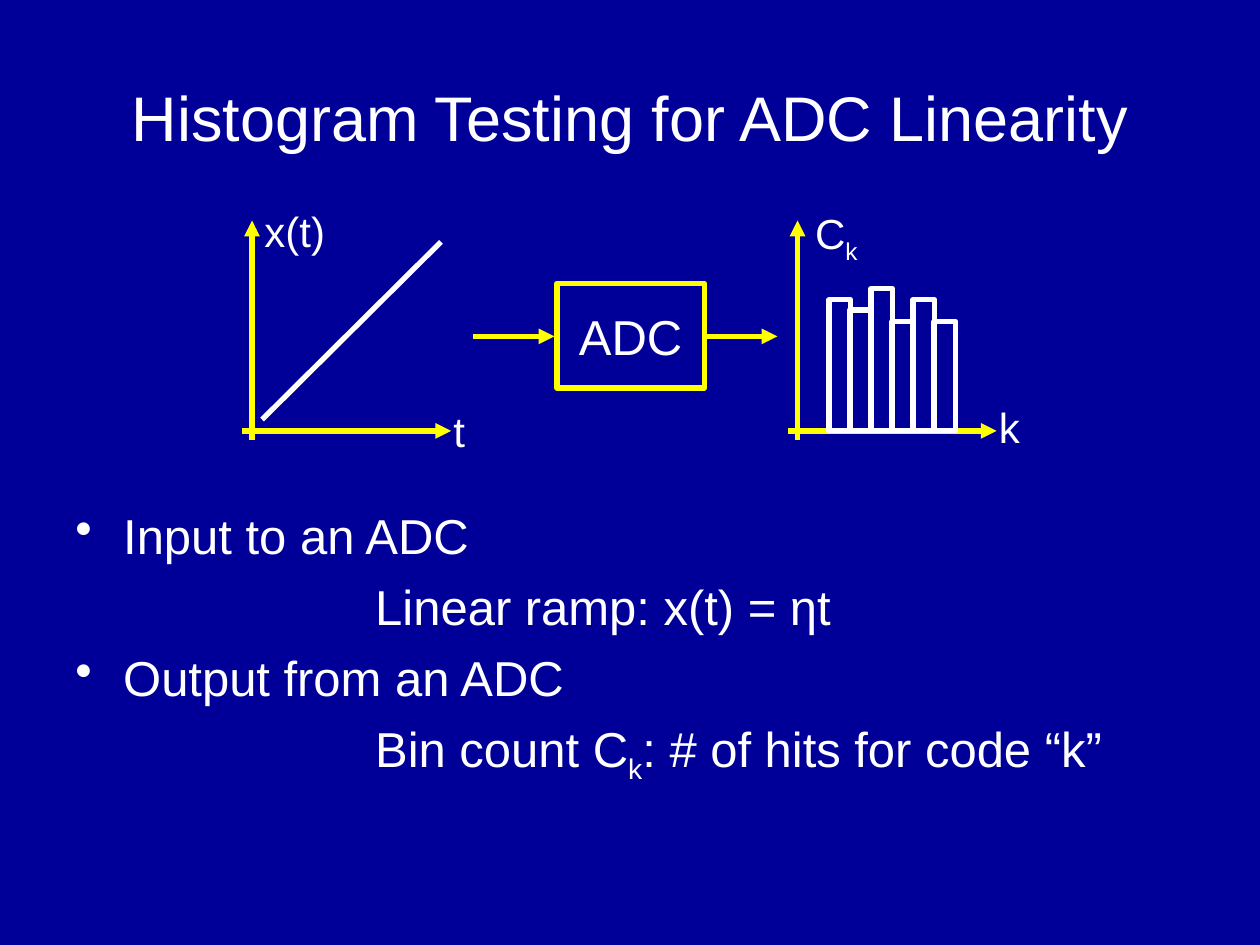
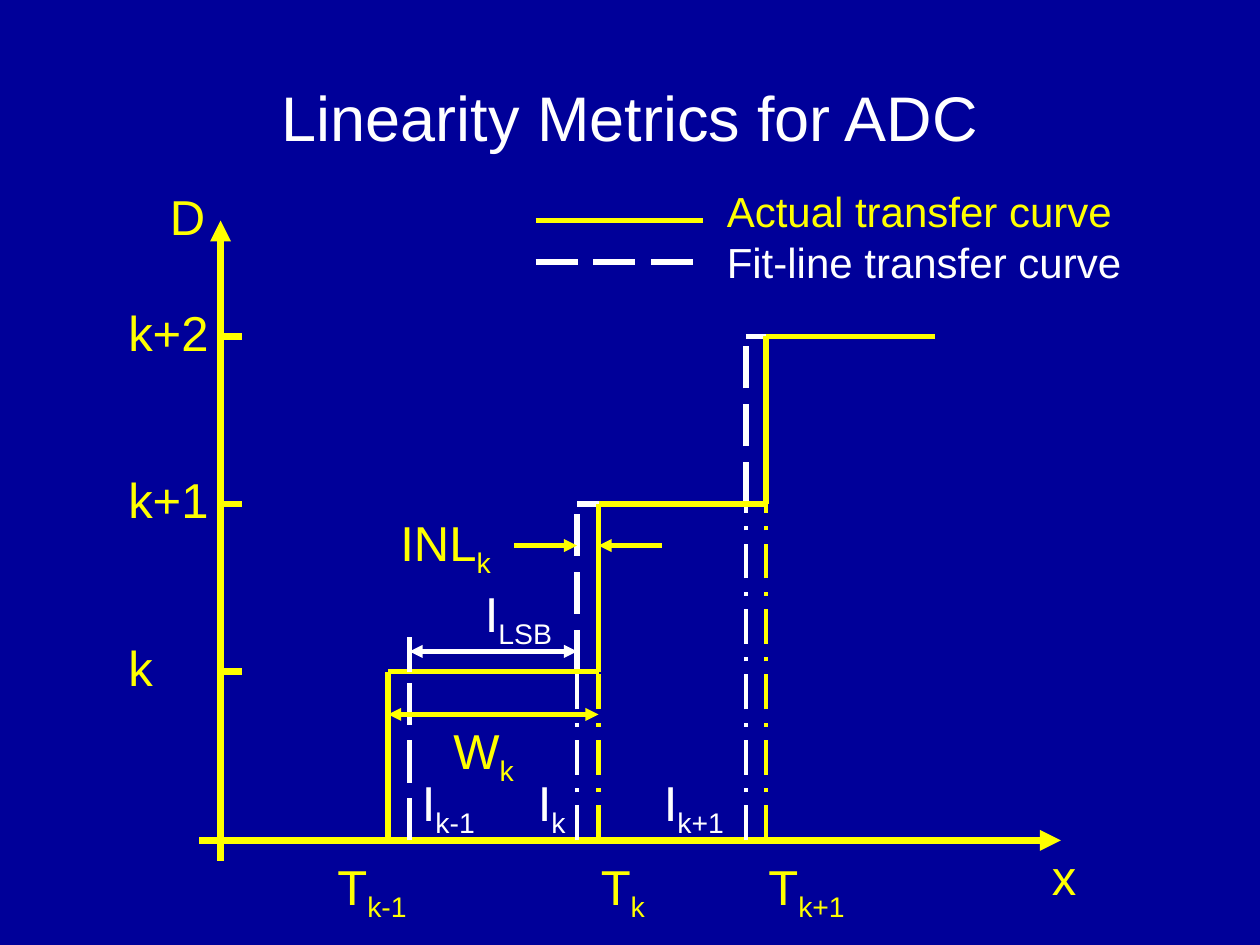
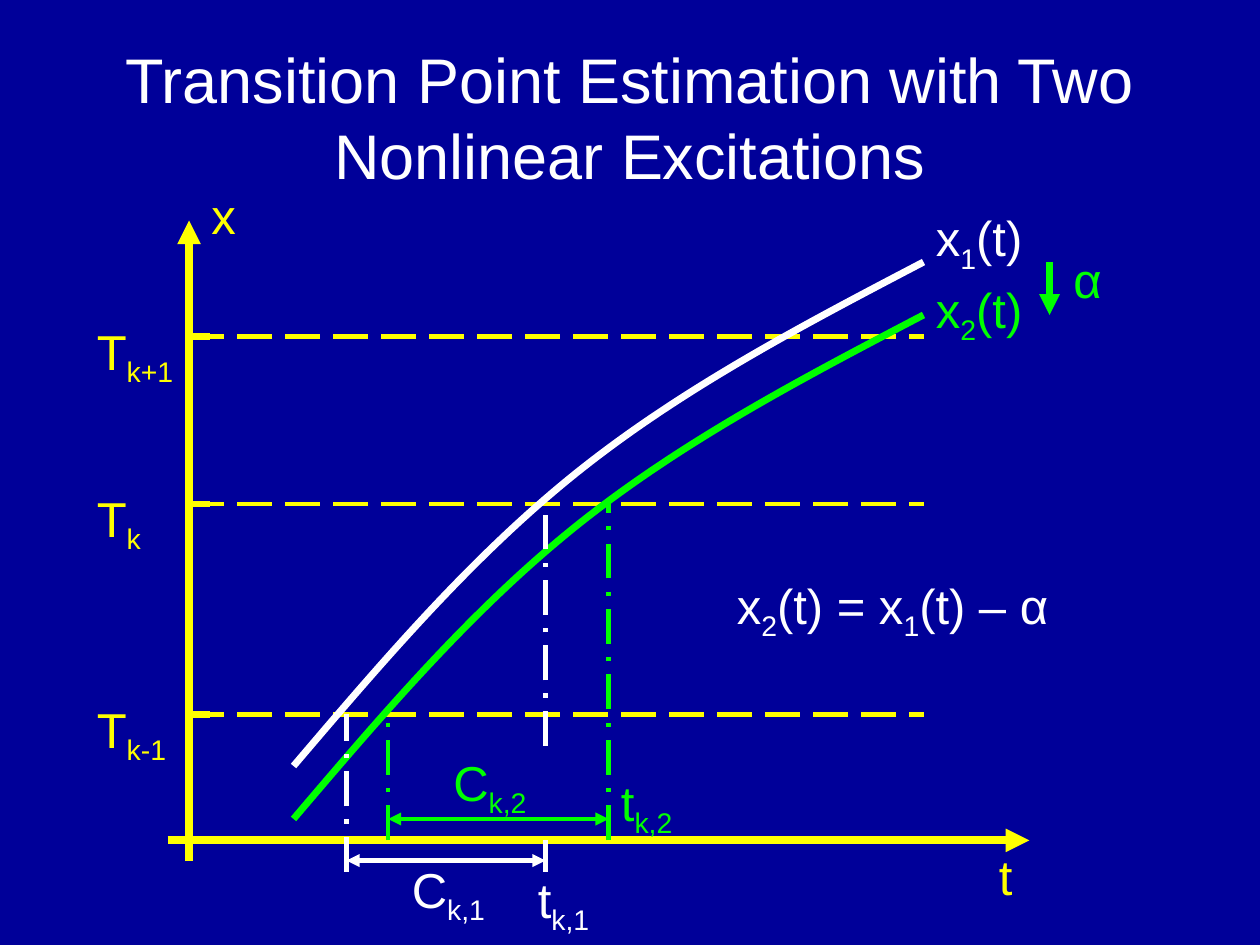
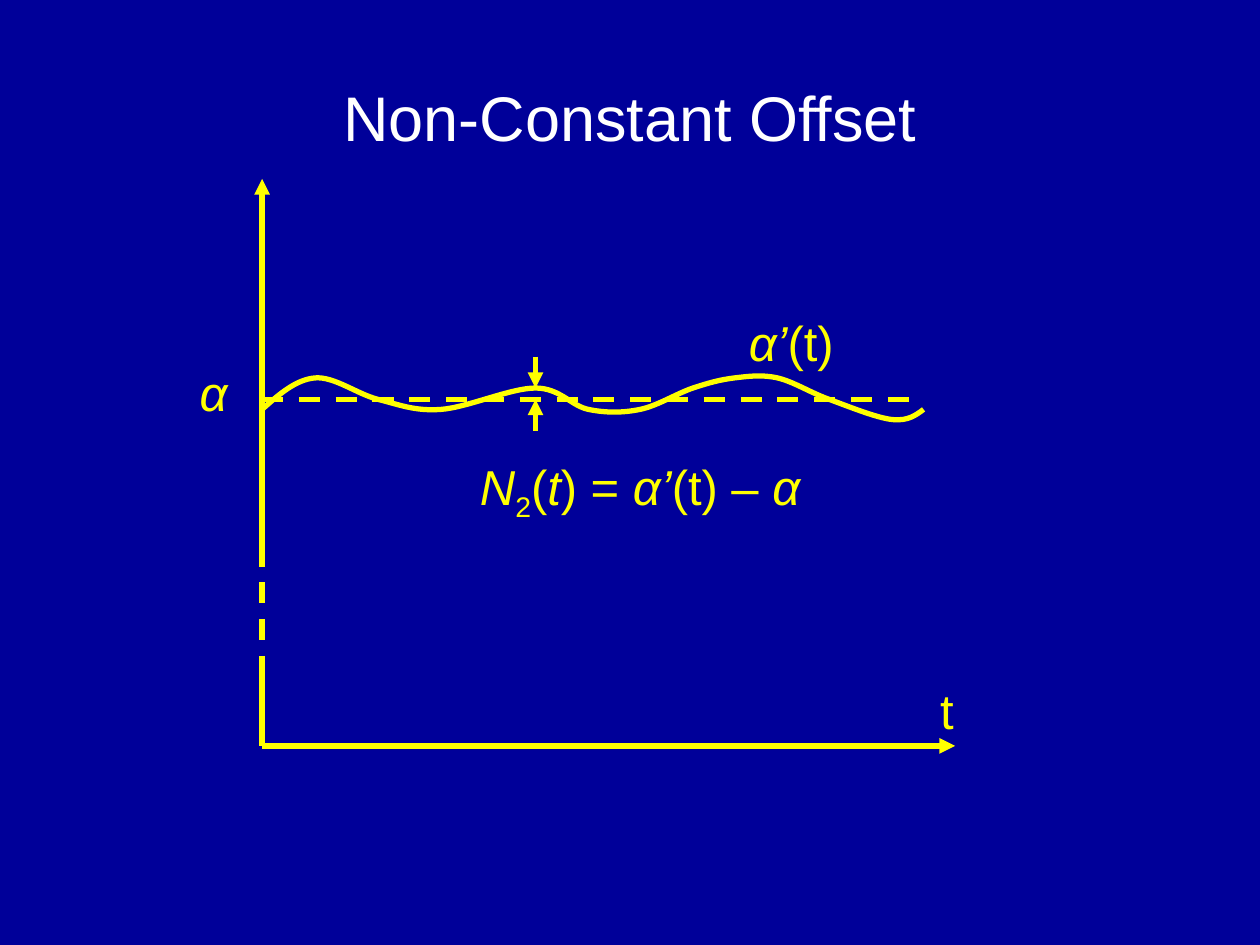
from lxml.etree import SubElement
from pptx import Presentation
from pptx.dml.color import RGBColor
from pptx.enum.dml import MSO_LINE
from pptx.enum.shapes import MSO_CONNECTOR, MSO_SHAPE
from pptx.enum.text import MSO_ANCHOR, PP_ALIGN
from pptx.oxml.ns import qn
from pptx.util import Inches, Pt

NAVY, WHITE, YELLOW, GREEN = "000099", "FFFFFF", "FFFF00", "00FF00"
FONT = "Arial"
LABEL_HEIGHT = {28: 0.57, 24: 0.5}
DASH, LONG_DASH, DASH_DOT = MSO_LINE.DASH, MSO_LINE.LONG_DASH, MSO_LINE.LONG_DASH_DOT


def color(hex_value):
    return RGBColor.from_string(hex_value)


def midpoint(a, b):
    return (a[0] + b[0]) / 2, (a[1] + b[1]) / 2


def control_points(points):
    """Return three Bezier points per segment of a smooth curve through points."""
    last = len(points) - 1
    tangents = [None] * (last + 1)
    for i in range(1, last):
        before, after = points[i - 1], points[i + 1]
        tangents[i] = (after[0] - before[0]) / 6, (after[1] - before[1]) / 6
    result = []
    for i in range(last):
        start, end = points[i], points[i + 1]
        if i > 0:
            leaving = start[0] + tangents[i][0], start[1] + tangents[i][1]
        if i + 1 < last:
            arriving = end[0] - tangents[i + 1][0], end[1] - tangents[i + 1][1]
        else:
            arriving = midpoint(leaving, end)
        if i == 0:
            leaving = midpoint(start, arriving)
        result += [leaving, arriving, end]
    return result


class DiagramDeck:
    def __init__(self):
        self.deck = Presentation()
        self.deck.slide_width, self.deck.slide_height = Inches(10), Inches(7.5)
        self.page = None

    def new_page(self, title, margin=0.5):
        self.page = self.deck.slides.add_slide(self.deck.slide_layouts[6])
        fill = self.page.background.fill
        fill.solid()
        fill.fore_color.rgb = color(NAVY)
        box = self.text_box(margin, 0.3, 10 - 2 * margin, 1.25)
        box.text_frame.vertical_anchor = MSO_ANCHOR.MIDDLE
        self.add_spans(box.text_frame.paragraphs[0], title, WHITE, 36, PP_ALIGN.CENTER)

    def text_box(self, left, top, width, height):
        box = self.page.shapes.add_textbox(*map(Inches, (left, top, width, height)))
        box.text_frame.word_wrap = True
        return box

    def add_spans(self, para, text, hue, size, align=PP_ALIGN.LEFT):
        """Fill a paragraph; |x| marks a subscript and *x* marks italics."""
        para.alignment = align
        for i, piece in enumerate(text.split("|")):
            for j, part in enumerate(piece.split("*")):
                if not part:
                    continue
                span = para.add_run()
                span.text = part
                formats = {"name": FONT, "size": Pt(size), "italic": j % 2 == 1}
                for name, value in formats.items():
                    setattr(span.font, name, value)
                span.font.color.rgb = color(hue)
                if i % 2:
                    span._r.get_or_add_rPr().set("baseline", "-25000")

    def label(self, text, left, top, width=0.83, hue=YELLOW, size=28):
        box = self.text_box(left, top, width, LABEL_HEIGHT[size])
        self.add_spans(box.text_frame.paragraphs[0], text, hue, size)

    def centered_label(self, text, left, top, width, height=0.57, spacing=1.0):
        box = self.text_box(left, top, width, height)
        box.text_frame.word_wrap = False
        para = box.text_frame.paragraphs[0]
        para.line_spacing = spacing
        self.add_spans(para, text, YELLOW, 28, PP_ALIGN.CENTER)

    def outline_list(self, items, left, top, width, height):
        """Add (text, is_bulleted) items; the unbulleted ones sit deeper."""
        frame = self.text_box(left, top, width, height).text_frame
        for i, (text, bulleted) in enumerate(items):
            para = frame.add_paragraph() if i else frame.paragraphs[0]
            para.space_before = Pt(7)
            self.add_spans(para, text, WHITE, 28)
            properties = para._p.get_or_add_pPr()
            properties.set("marL", str(Inches(0.38 if bulleted else 2.38)))
            properties.set("indent", str(Inches(-0.38 if bulleted else 0)))
            if bulleted:
                SubElement(properties, qn("a:buChar"), char="•")

    def stroke(self, shape, hue, weight, dash=None):
        shape.line.color.rgb = color(hue)
        shape.line.width = Pt(weight)
        if dash:
            shape.line.dash_style = dash

    def line(self, start, end, hue=YELLOW, weight=3, dash=None, heads=0):
        """Draw a line; heads is 0, 1 (arrow at the end) or 2 (both ends)."""
        connector = self.page.shapes.add_connector(
            MSO_CONNECTOR.STRAIGHT, *map(Inches, (*start, *end)))
        self.stroke(connector, hue, weight, dash)
        properties = connector._element.spPr
        for tag in ("a:headEnd", "a:tailEnd")[2 - heads:]:
            SubElement(properties.find(qn("a:ln")), qn(tag), type="triangle")
        SubElement(properties, qn("a:effectLst"))

    def steps(self, corners, hue, dash=None):
        for start, end in zip(corners, corners[1:]):
            self.line(start, end, hue, 3, dash)

    def frame(self, left, top, width, height, hue, text=""):
        box = self.page.shapes.add_shape(
            MSO_SHAPE.RECTANGLE, *map(Inches, (left, top, width, height)))
        box.shadow.inherit = False
        box.fill.background()
        self.stroke(box, hue, 3)
        if text:
            box.text_frame.word_wrap = False
            box.text_frame.vertical_anchor = MSO_ANCHOR.MIDDLE
            self.add_spans(box.text_frame.paragraphs[0], text, WHITE, 28, PP_ALIGN.CENTER)

    def curve(self, points, hue, weight):
        builder = self.page.shapes.build_freeform(*map(Inches, points[0]))
        builder.add_line_segments(
            [(Inches(x), Inches(y)) for x, y in control_points(points)], close=False)
        shape = builder.convert_to_shape()
        shape.shadow.inherit = False
        shape.fill.background()
        self.stroke(shape, hue, weight)
        segments = list(shape._element.iter(qn("a:lnTo")))
        outline = segments[0].getparent()
        for i in range(0, len(segments), 3):
            bend = SubElement(outline, qn("a:cubicBezTo"))
            for segment in segments[i:i + 3]:
                bend.append(segment[0])
                outline.remove(segment)


def histogram_page(art):
    art.new_page("Histogram Testing for ADC Linearity")
    art.outline_list([
        ("Input to an ADC", True),
        ("Linear ramp: x(t) = ηt", False),
        ("Output from an ADC", True),
        ("Bin count C|k|: # of hits for code “k”", False),
    ], 0.5, 3.96, 9, 2.74)

    base = 3.42
    for origin in (2, 6.33):
        art.line((origin - 0.08, base), (origin + 1.58, base), heads=1)
        art.line((origin, 3.49), (origin, 1.75), heads=1)
    art.line((2.08, 3.33), (3.5, 1.92), WHITE)
    art.frame(4.42, 2.25, 1.17, 0.83, YELLOW, "ADC")
    for start, end in ((3.75, 4.4), (5.6, 6.17)):
        art.line((start, 2.67), (end, 2.67), heads=1)
    for i, height in enumerate((1.04, 0.96, 1.13, 0.87, 1.04, 0.87)):
        art.frame(6.58 + i / 6, base - height, 0.17, height, WHITE)
    for text, left, top in (("x(t)", 2, 1.58), ("t", 3.5, 3.17),
                            ("C|k|", 6.37, 1.6), ("k", 7.83, 3.14)):
        art.label(text, left, top, 0.92, WHITE, 24)


def metrics_page(art):
    art.new_page("Linearity Metrics for ADC", margin=0)
    floor, level_k, level_k1, level_k2 = 6.67, 5.33, 4, 2.67
    art.line((1.58, floor), (8.42, floor), weight=4, heads=1)
    art.line((1.75, 6.83), (1.75, 1.75), weight=4, heads=1)

    fit = (3.25, 4.58, 5.92, 7.25)
    actual = (3.08, 4.75, 6.08, 7.42)
    for edges, hue, dash in ((fit, WHITE, LONG_DASH), (actual, YELLOW, None)):
        corners = [(edges[0], floor)]
        for i, level in enumerate((level_k, level_k1, level_k2)):
            corners += [(edges[i], level), (edges[i + 1], level)]
        art.steps(corners, hue, dash)
        for x, level in zip(edges[1:], (level_k, level_k1)):
            art.line((x, floor), (x, level), hue, 2.5, DASH_DOT)
    art.line((fit[0], level_k), (fit[0], 5), WHITE, 2.5, DASH_DOT)

    for level, text in ((level_k, "k"), (level_k1, "k+1"), (level_k2, "k+2")):
        art.line((1.75, level), (1.92, level), weight=4)
        art.label(text, 0.92, level - 0.32, 1)
    for index, t_left, i_left in (("k-1", 2.58, 3.25), ("k", 4.67, 4.17), ("k+1", 6, 5.17)):
        art.label(f"T|{index}|", t_left, 6.75, 1)
        art.label(f"I|{index}|", i_left, 6.08, hue=WHITE)
    art.label("D", 1.25, 1.43)
    art.label("x", 8.25, 6.67)

    art.line((4.08, 4.33), (fit[1], 4.33), weight=2.5, heads=1)
    art.line((5.25, 4.33), (actual[1], 4.33), weight=2.5, heads=1)
    art.label("INL|k|", 3.08, 4.02, 1)
    art.line((actual[0], 5.67), (actual[1], 5.67), weight=2.5, heads=2)
    art.label("W|k|", 3.5, 5.67)
    art.line((fit[0], 5.17), (fit[1], 5.17), WHITE, 2.5, heads=2)
    art.label("I|LSB|", 3.75, 4.58, hue=WHITE)

    for text, y, top, hue, dash in (
            ("Actual transfer curve", 1.75, 1.42, YELLOW, None),
            ("Fit-line transfer curve", 2.08, 1.83, WHITE, LONG_DASH)):
        art.line((4.25, y), (5.58, y), hue, 3, dash)
        art.label(text, 5.67, top, 3.5, hue, 24)


def transition_page(art):
    art.new_page("Transition Point Estimation with Two Nonlinear Excitations", margin=0)
    floor = 6.67
    art.line((1.33, floor), (8.17, floor), weight=4.5, heads=1)
    art.line((1.5, 6.83), (1.5, 1.75), weight=4.5, heads=1)
    art.label("x", 1.58, 1.42)
    art.label("t", 7.83, 6.67)
    for index, level in (("k-1", 5.67), ("k", 4), ("k+1", 2.67)):
        art.line((1.5, level), (1.67, level), weight=4)
        art.line((1.5, level), (7.33, level), weight=2.5, dash=LONG_DASH)
        art.label(f"T|{index}|", 0.67, level - 0.17, 1)

    ramp, alpha = ((2.33, 6.08), (4.58, 3.75), (7.33, 2.08)), 0.42
    art.curve(ramp, WHITE, 4)
    art.curve([(x, y + alpha) for x, y in ramp], GREEN, 4)

    for start, end, hue in (
            ((4.33, 5.92), (4.33, 4), WHITE), ((2.75, 6.92), (2.75, 5.67), WHITE),
            ((4.83, floor), (4.83, 4), GREEN), ((3.08, floor), (3.08, 5.67), GREEN)):
        art.line(start, end, hue, 2.5, DASH_DOT)
    art.line((4.33, 6.92), (4.33, floor), WHITE, 2.5)
    art.line((2.75, 6.83), (4.33, 6.83), WHITE, 2.5, heads=2)
    art.line((3.08, 6.5), (4.83, 6.5), GREEN, 2.5, heads=2)
    art.line((8.33, 2.08), (8.33, 2.08 + alpha), GREEN, 4, heads=1)

    for text, left, top, width, hue in (
            ("x|1|(t)", 7.33, 1.6, 1, WHITE), ("x|2|(t)", 7.33, 2.17, 1, GREEN),
            ("C|k,1|", 3.17, 6.77, 1, WHITE), ("C|k,2|", 3.5, 5.92, 1, GREEN),
            ("t|k,1|", 4.17, 6.85, 0.83, WHITE), ("t|k,2|", 4.83, 6.08, 0.83, GREEN),
            ("α", 8.42, 1.93, 0.5, GREEN),
            ("x|2|(t) = x|1|(t) – α", 5.75, 4.52, 2.92, WHITE)):
        art.label(text, left, top, width, hue)


def offset_page(art):
    art.new_page("Non-Constant Offset")
    axis, floor, alpha = 2.08, 5.92, 3.17
    art.line((axis, 4.33), (axis, 1.42), heads=1)
    art.line((axis, 4.33), (axis, 5.33), dash=DASH)
    art.line((axis, 5.33), (axis, floor))
    art.line((axis, floor), (7.58, floor), heads=1)
    art.line((axis, alpha), (7.33, alpha), dash=DASH)
    art.line((4.25, 2.83), (4.25, 3.08), heads=1)
    art.line((4.25, 3.42), (4.25, alpha), heads=1)
    art.curve([(axis, 3.25), (2.5, 3), (3, 3.17), (3.5, 3.25), (4.25, 3.08),
               (4.67, 3.25), (5.08, 3.25), (5.5, 3.08), (5.83, 3), (6.17, 3),
               (6.58, 3.17), (7.08, 3.33), (7.33, 3.25)], YELLOW, 3)
    art.centered_label("t", 7.36, 5.35, 0.31)
    art.centered_label("*α*", 1.47, 2.83, 0.45)
    art.centered_label("*α’*(t)", 5.83, 2.48, 0.9, 0.52, 0.9)
    art.centered_label("*N*|2|(*t*) = *α’*(t) – *α*", 3.67, 3.58, 2.82, 0.52, 0.9)


def main():
    art = DiagramDeck()
    for build_page in (histogram_page, metrics_page, transition_page, offset_page):
        build_page(art)
    art.deck.save("out.pptx")


if __name__ == "__main__":
    main()
